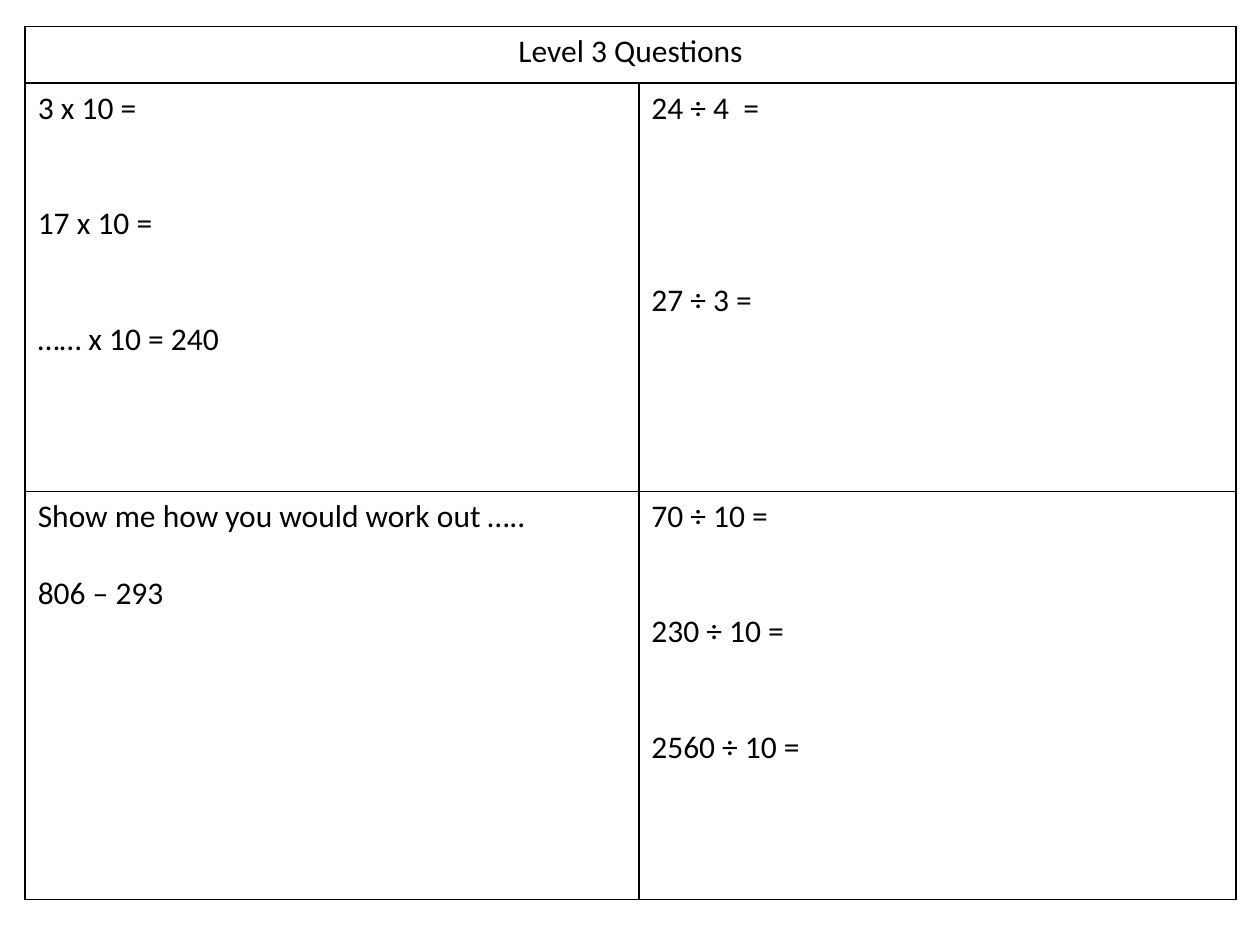
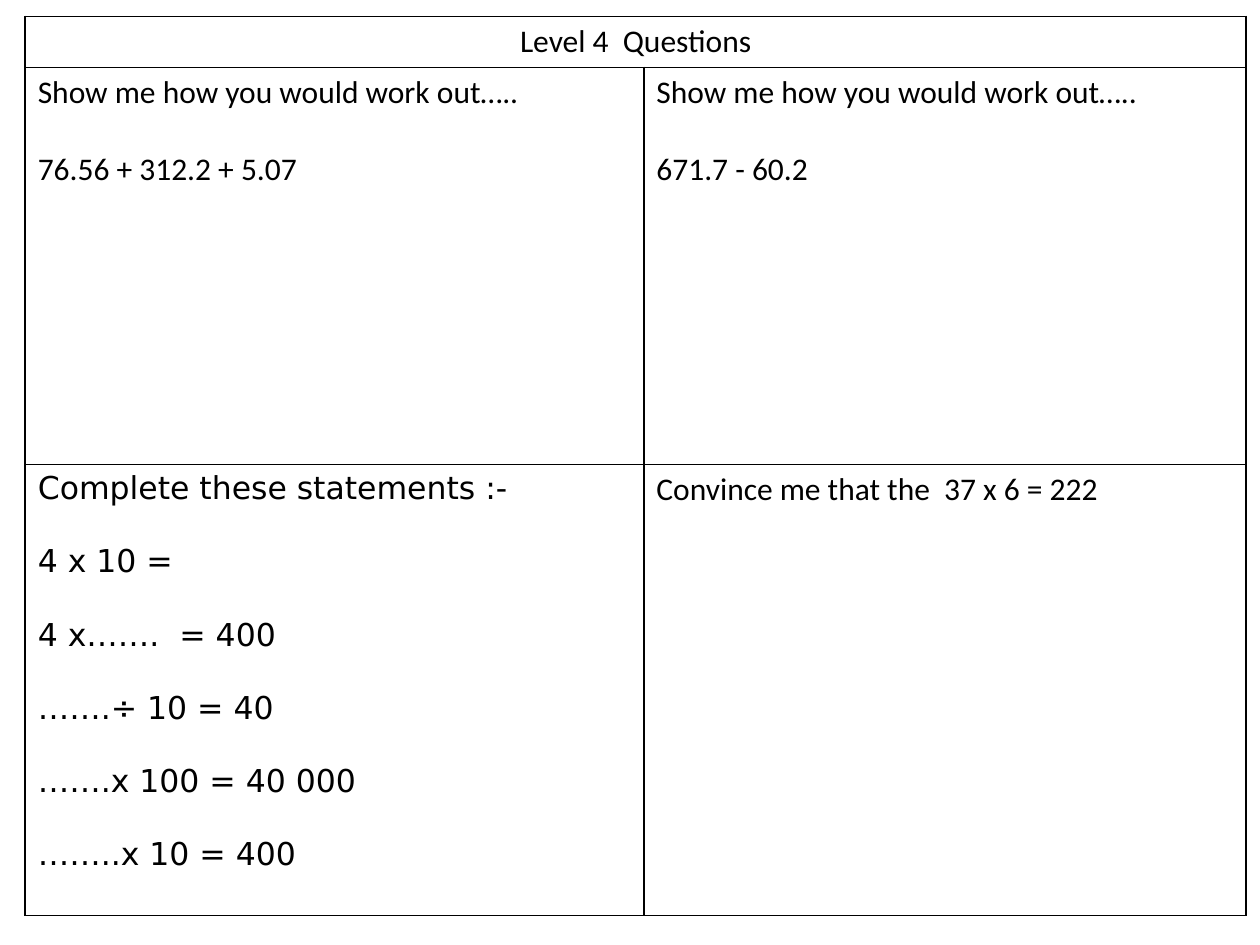
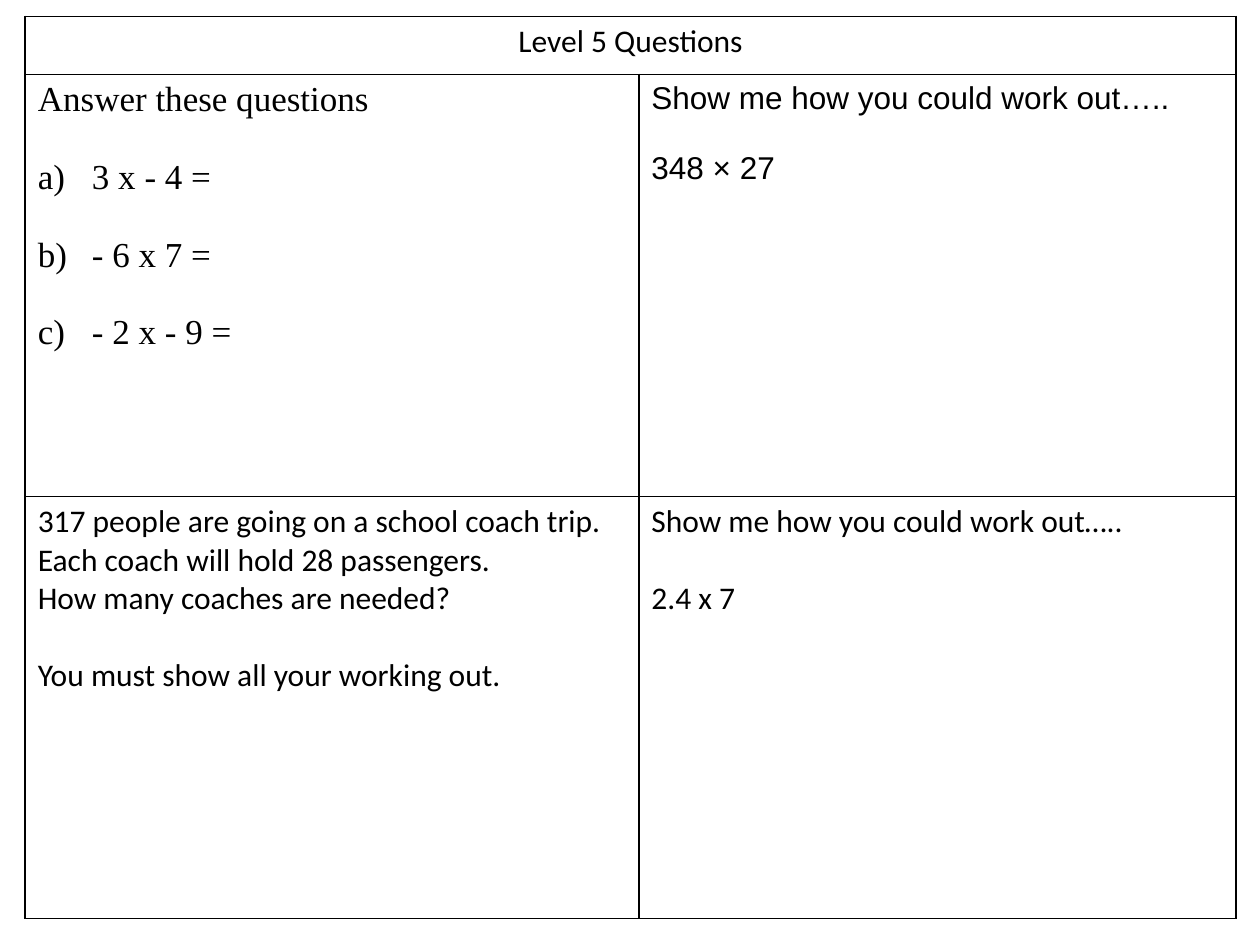
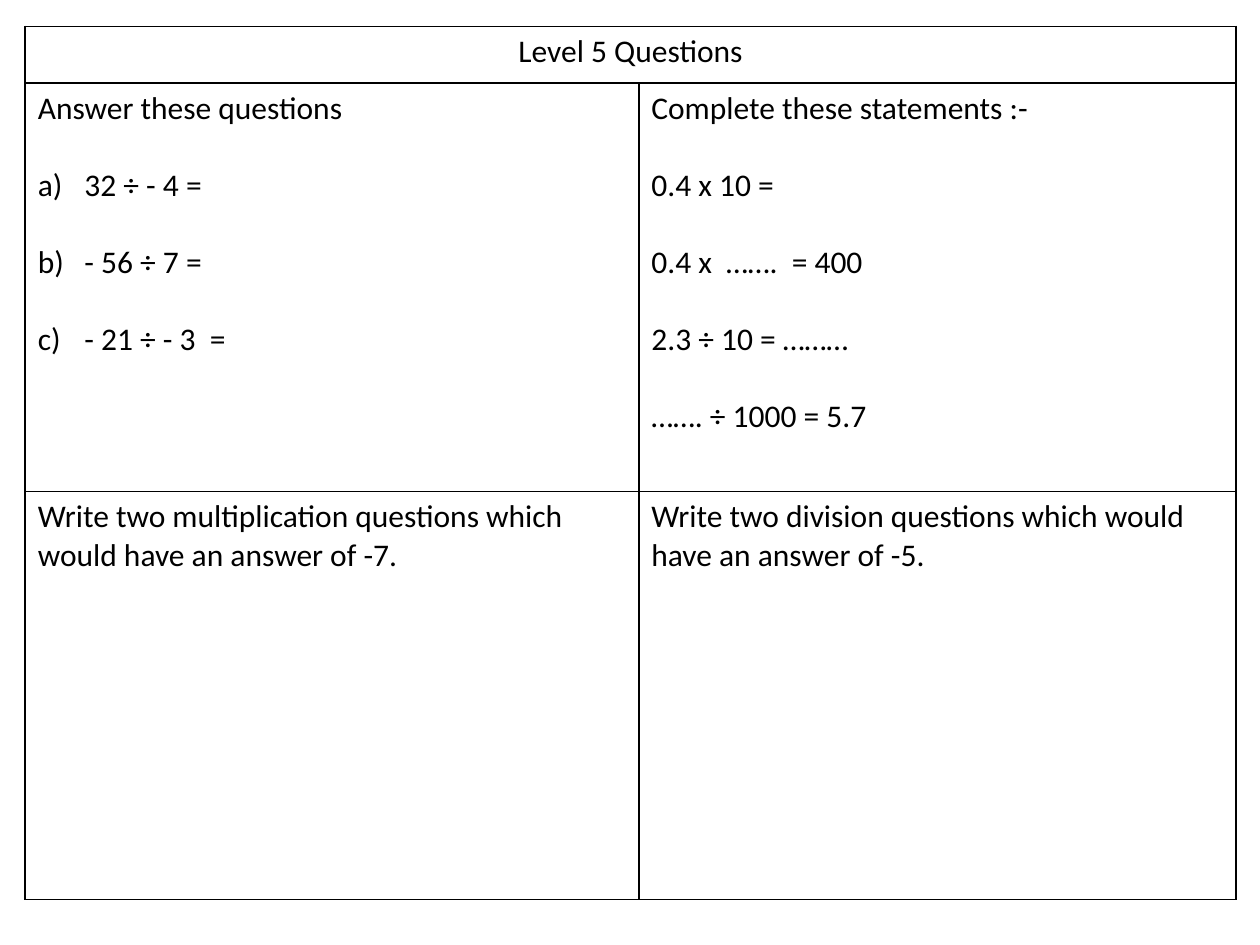
from dataclasses import dataclass

from lxml import etree
from pptx import Presentation
from pptx.dml.color import RGBColor
from pptx.enum.text import PP_ALIGN
from pptx.oxml.ns import qn
from pptx.util import Inches, Pt

CENTER = PP_ALIGN.CENTER
LEFT = PP_ALIGN.LEFT
INK = "000000"
BORDER_POINTS = 1
BORDER_SIDES = ("a:lnL", "a:lnR", "a:lnT", "a:lnB")
TABLE_LEFT = 0.2
BLANK_LAYOUT = 6


@dataclass(frozen=True)
class Style:
    font: str = "Calibri"
    size: float = 18
    line_ratio: float = 1.22
    label_indent: float = 0.37


BODY = Style()
SANS = Style("DejaVu Sans", line_ratio=1.16)
SERIF = Style("Times New Roman", 20, 1.11, 0.43)
ARIAL = Style("Arial", line_ratio=1.12)


@dataclass(frozen=True)
class Line:
    text: str
    gap_lines: int = 0


@dataclass(frozen=True)
class Question:
    lines: tuple[Line, ...]
    style: Style = BODY


@dataclass(frozen=True)
class Sheet:
    title: str
    top: float
    columns: tuple[float, float]
    rows: tuple[float, float, float]
    questions: tuple[Question, Question, Question, Question]


def spaced(gap_lines: int, *texts: str, style: Style = BODY) -> Question:
    lines = [Line(text, gap_lines if index else 0) for index, text in enumerate(texts)]
    return Question(tuple(lines), style)


COLUMNS = (4.87, 4.74)
ROWS = (0.45, 3.24, 3.24)

SHEETS = (
    Sheet("Level 3 Questions", 0.21, COLUMNS, ROWS, (
        spaced(2, "3 x 10 =", "17 x 10 =", "…… x 10 = 240"),
        spaced(4, "24 ÷ 4  =", "27 ÷ 3 ="),
        spaced(1, "Show me how you would work out …..", "806 – 293"),
        spaced(2, "70 ÷ 10 =", "230 ÷ 10 =", "2560 ÷ 10 ="),
    )),
    Sheet("Level 4  Questions", 0.13, (4.91, 4.78), (0.4, 3.15, 3.58), (
        spaced(1, "Show me how you would work out…..", "76.56 + 312.2 + 5.07"),
        spaced(1, "Show me how you would work out…..", "671.7 - 60.2"),
        spaced(1, "Complete these statements :-", "4 x 10 =", "4 x…….  = 400",
               "…….÷ 10 = 40", "…….x 100 = 40 000", "……..x 10 = 400", style=SANS),
        spaced(0, "Convince me that the  37 x 6 = 222"),
    )),
    Sheet("Level 5 Questions", 0.13, COLUMNS, (0.46, 3.35, 3.35), (
        spaced(1, "Answer these questions", "a)\t3 x - 4 =", "b)\t- 6 x 7 =",
               "c)\t- 2 x - 9 =", style=SERIF),
        spaced(1, "Show me how you could work out…..", "348 × 27", style=ARIAL),
        Question((
            Line("317 people are going on a school coach trip. "
                 "Each coach will hold 28 passengers."),
            Line("How many coaches are needed?"),
            Line("You must show all your working out.", 1),
        )),
        spaced(1, "Show me how you could work out…..", "2.4 x 7"),
    )),
    Sheet("Level 5 Questions", 0.21, COLUMNS, ROWS, (
        spaced(1, "Answer these questions", "a)\t32 ÷ - 4 =", "b)\t- 56 ÷ 7 =",
               "c)\t- 21 ÷ - 3  ="),
        spaced(1, "Complete these statements :-", "0.4 x 10 =", "0.4 x  …….  = 400",
               "2.3 ÷ 10 = ………", "……. ÷ 1000 = 5.7"),
        spaced(0, "Write two multiplication questions which would have an answer of -7."),
        spaced(0, "Write two division questions which would have an answer of -5."),
    )),
)


def color(value: str) -> RGBColor:
    return RGBColor.from_string(value)


def format_cell(cell) -> None:
    properties = cell._tc.get_or_add_tcPr()
    for side in BORDER_SIDES:
        border = etree.SubElement(properties, qn(side), w=str(Pt(BORDER_POINTS)))
        fill = etree.SubElement(border, qn("a:solidFill"))
        etree.SubElement(fill, qn("a:srgbClr"), val=INK)
    cell.fill.background()


def hang_label(paragraph, indent: float) -> None:
    properties = paragraph._p.get_or_add_pPr()
    properties.set("marL", str(Inches(indent)))
    properties.set("indent", str(-Inches(indent)))


def write_question(cell, question: Question, alignment=LEFT) -> None:
    style = question.style
    frame = cell.text_frame
    for index, line in enumerate(question.lines):
        paragraph = frame.add_paragraph() if index else frame.paragraphs[0]
        paragraph.alignment = alignment
        if line.gap_lines:
            paragraph.space_before = Pt(round(line.gap_lines * style.size * style.line_ratio, 1))
        if "\t" in line.text:
            hang_label(paragraph, style.label_indent)
        run = paragraph.add_run()
        run.text = line.text
        run.font.name = style.font
        run.font.size = Pt(style.size)
        run.font.color.rgb = color(INK)


def add_sheet(presentation, sheet: Sheet) -> None:
    slide = presentation.slides.add_slide(presentation.slide_layouts[BLANK_LAYOUT])
    table = slide.shapes.add_table(
        len(sheet.rows), len(sheet.columns), Inches(TABLE_LEFT), Inches(sheet.top),
        Inches(sum(sheet.columns)), Inches(sum(sheet.rows)),
    ).table
    table.first_row = False
    table.horz_banding = False
    for column, width in zip(table.columns, sheet.columns):
        column.width = Inches(width)
    for row, height in zip(table.rows, sheet.rows):
        row.height = Inches(height)
    for cell in table.iter_cells():
        format_cell(cell)
    title_cell = table.cell(0, 0)
    title_cell.merge(table.cell(0, 1))
    write_question(title_cell, spaced(0, sheet.title), CENTER)
    for index, question in enumerate(sheet.questions):
        row, column = divmod(index, len(sheet.columns))
        write_question(table.cell(row + 1, column), question)


def main() -> None:
    presentation = Presentation()
    presentation.slide_width = Inches(10)
    presentation.slide_height = Inches(7.5)
    for sheet in SHEETS:
        add_sheet(presentation, sheet)
    presentation.save("out.pptx")


if __name__ == "__main__":
    main()
